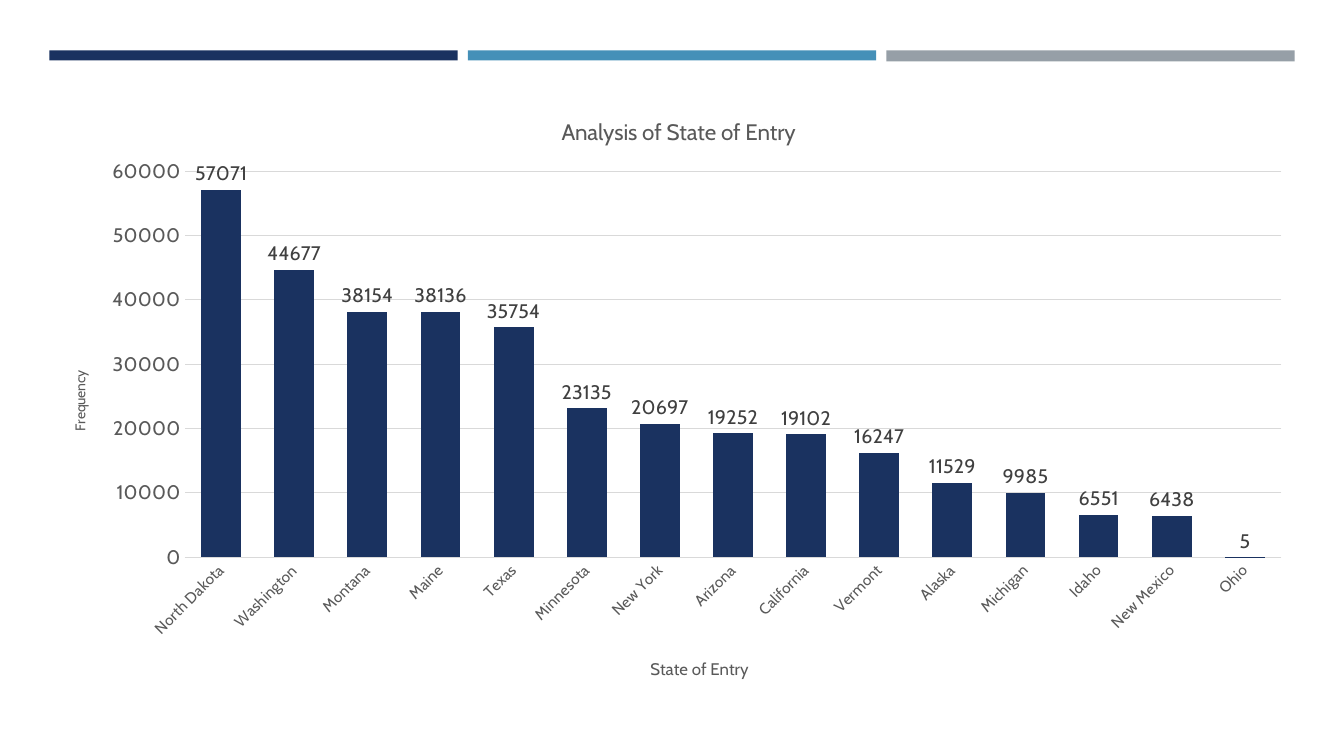
from dataclasses import dataclass

import lxml.etree
import pptx
import pptx.chart.data
import pptx.dml.color
import pptx.enum.chart
import pptx.enum.shapes
import pptx.oxml.ns
import pptx.util

Inches = pptx.util.Inches


@dataclass(frozen=True)
class Theme:
    font: str = "Cabin"
    navy: str = "1A3260"
    blue: str = "4590B8"
    gray: str = "969FA7"
    grid: str = "D9D9D9"
    text: str = "595959"
    label: str = "404040"
    title_size: int = 16
    value_size: int = 14
    state_title_size: int = 12
    state_size: int = 11
    base_size: int = 10


THEME = Theme()
CHART_LEFT, CHART_TOP, CHART_WIDTH, CHART_HEIGHT = 0.44, 0.9, 12.52, 6.02
ENTRIES = {
    "North Dakota": 57071,
    "Washington": 44677,
    "Montana": 38154,
    "Maine": 38136,
    "Texas": 35754,
    "Minnesota": 23135,
    "New York": 20697,
    "Arizona": 19252,
    "California": 19102,
    "Vermont": 16247,
    "Alaska": 11529,
    "Michigan": 9985,
    "Idaho": 6551,
    "New Mexico": 6438,
    "Ohio": 5,
}


def rgb(color):
    return pptx.dml.color.RGBColor.from_string(color)


def style_font(font, size, color):
    font.name = THEME.font
    font.size = pptx.util.Pt(size)
    font.bold = False
    font.color.rgb = rgb(color)


def style_line(line, color):
    line.color.rgb = rgb(color)
    line.width = pptx.util.Pt(0.75)


def add_band(slide, left, height, color):
    band = slide.shapes.add_shape(
        pptx.enum.shapes.MSO_SHAPE.RECTANGLE,
        Inches(left), Inches(0.5), Inches(4.05), Inches(height),
    )
    band.shadow.inherit = False
    band.fill.solid()
    band.fill.fore_color.rgb = rgb(color)
    band.line.fill.background()


def place(element, left, top, width=None, height=None):
    qn = pptx.oxml.ns.qn
    for previous in element.findall(qn("c:layout")):
        element.remove(previous)
    layout = lxml.etree.Element(qn("c:layout"))
    manual = lxml.etree.SubElement(layout, qn("c:manualLayout"))
    settings = {"xMode": "edge", "yMode": "edge"}
    if width is not None:
        settings = {"layoutTarget": "inner", **settings}
    settings["x"] = (left - CHART_LEFT) / CHART_WIDTH
    settings["y"] = (top - CHART_TOP) / CHART_HEIGHT
    if width is not None:
        settings["w"] = width / CHART_WIDTH
        settings["h"] = height / CHART_HEIGHT
    for tag, value in settings.items():
        lxml.etree.SubElement(manual, qn(f"c:{tag}")).set("val", str(value))
    text = element.find(qn("c:tx"))
    if text is None:
        element.insert(0, layout)
    else:
        text.addnext(layout)


def set_title(owner, title, text, size, left, top):
    frame = title.text_frame
    frame.text = text
    style_font(frame.paragraphs[0].runs[0].font, size, THEME.text)
    place(title.element, left, top)


def rotate(chart, body_path, degrees):
    for body in chart.element.xpath(body_path):
        body.set("rot", str(degrees * 60000))
        body.set("vert", "horz")


def style_axis(axis, size):
    none = pptx.enum.chart.XL_TICK_MARK.NONE
    axis.major_tick_mark = none
    axis.minor_tick_mark = none
    style_font(axis.tick_labels.font, size, THEME.text)


def style_bars(plot):
    plot.gap_width = 84
    plot.overlap = -18
    plot.vary_by_categories = False
    bars = plot.series[0]
    bars.invert_if_negative = False
    bars.format.fill.solid()
    bars.format.fill.fore_color.rgb = rgb(THEME.navy)
    labels = bars.data_labels
    labels.show_value = True
    labels.position = pptx.enum.chart.XL_LABEL_POSITION.OUTSIDE_END
    style_font(labels.font, THEME.value_size, THEME.label)


def add_entry_chart(slide):
    data = pptx.chart.data.CategoryChartData()
    data.categories = list(ENTRIES)
    data.add_series("Series 1", list(ENTRIES.values()))
    chart = slide.shapes.add_chart(
        pptx.enum.chart.XL_CHART_TYPE.COLUMN_CLUSTERED,
        Inches(CHART_LEFT), Inches(CHART_TOP),
        Inches(CHART_WIDTH), Inches(CHART_HEIGHT), data,
    ).chart
    style_font(chart.font, THEME.base_size, "000000")
    chart.has_legend = False
    style_bars(chart.plots[0])

    states, frequency = chart.category_axis, chart.value_axis
    style_axis(states, THEME.state_size)
    style_line(states.format.line, THEME.grid)
    style_axis(frequency, THEME.value_size)
    frequency.format.line.fill.background()
    style_line(frequency.major_gridlines.format.line, THEME.grid)
    frequency.minimum_scale = 0
    frequency.maximum_scale = 60000
    frequency.major_unit = 10000

    for owner, text, size, left, top in (
        (chart, "Analysis of State of Entry", THEME.title_size, 5.53, 1.12),
        (states, "State of Entry", THEME.state_title_size, 6.42, 6.5),
        (frequency, "Frequency", THEME.base_size, 0.67, 3.65),
    ):
        title = owner.chart_title if owner is chart else owner.axis_title
        set_title(owner, title, text, size, left, top)
    rotate(chart, ".//c:catAx/c:txPr/a:bodyPr", -45)
    rotate(chart, ".//c:valAx/c:title//a:bodyPr", -90)
    place(chart.element.xpath("c:chart/c:plotArea")[0], 1.83, 1.7, 10.88, 3.83)


def main():
    deck = pptx.Presentation()
    deck.slide_width = Inches(13.33)
    deck.slide_height = Inches(7.5)
    slide = deck.slides.add_slide(deck.slide_layouts.get_by_name("Blank"))
    bands = ((THEME.navy, 0.1), (THEME.blue, 0.1), (THEME.gray, 0.11))
    for position, (color, height) in enumerate(bands):
        add_band(slide, 0.49 + position * 4.15, height, color)
    add_entry_chart(slide)
    deck.save("out.pptx")


if __name__ == "__main__":
    main()
